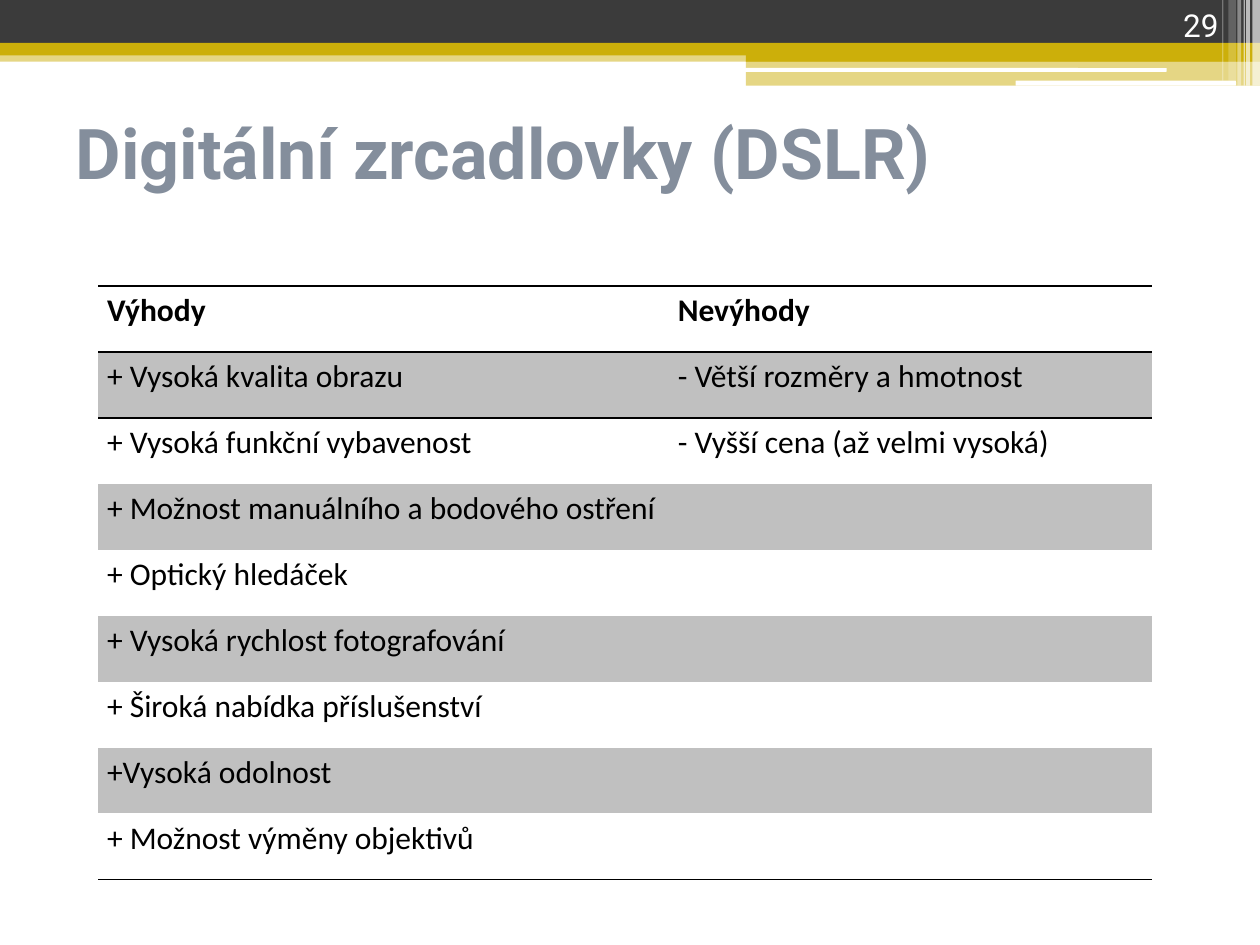
import pptx
import pptx.util
import pptx.dml.color
import pptx.enum.shapes
import pptx.enum.text
import pptx.oxml.ns
import lxml.etree

COLORS = {"dark": "3B3B3B", "gold": "CCAF0A", "white": "FFFFFF",
          "title": "848E9C", "band": "C0C0C0", "ink": "000000"}
GRID = pptx.util.Inches(0.1)
NO_STYLE = "{2D5ABB26-0587-4C30-8999-92F81FD0307C}"
ALIGN = pptx.enum.text.PP_ALIGN
ANCHOR = pptx.enum.text.MSO_ANCHOR
PRESET = pptx.enum.shapes.MSO_SHAPE


def rgb(name):
    return pptx.dml.color.RGBColor.from_string(COLORS[name])


def cells(*counts):
    return [round(count * GRID) for count in counts]


def xml(tag, parent, **attributes):
    element = lxml.etree.SubElement(parent, pptx.oxml.ns.qn(tag))
    for key, value in attributes.items():
        element.set(key, str(value))
    return element


def write(frame, text, font="Roboto", size=18, color="ink", bold=False,
          align=ALIGN.LEFT, spacing=1.0):
    frame.word_wrap = True
    paragraph = frame.paragraphs[0]
    paragraph.alignment = align
    paragraph.line_spacing = spacing
    run = paragraph.add_run()
    run.text = text
    run.font.name = font
    run.font.size = pptx.util.Pt(size)
    run.font.bold = bold
    run.font.color.rgb = rgb(color)


class SlideBuilder:
    def __init__(self, deck):
        self.slide = deck.slides.add_slide(deck.slide_layouts[5])

    def bar(self, box, color, opacity=100, preset=PRESET.RECTANGLE):
        bar = self.slide.shapes.add_shape(preset, *cells(*box))
        bar.shadow.inherit = False
        bar.line.fill.background()
        bar.fill.solid()
        bar.fill.fore_color.rgb = rgb(color)
        if opacity < 100:
            tone = bar._element.spPr.find(".//" + pptx.oxml.ns.qn("a:srgbClr"))
            xml("a:alpha", tone, val=opacity * 1000)

    def title(self, box, text):
        title = self.slide.shapes.title
        title.left, title.top, title.width, title.height = cells(*box)
        title.text_frame.auto_size = pptx.enum.text.MSO_AUTO_SIZE.NONE
        title.text_frame.vertical_anchor = ANCHOR.MIDDLE
        write(title.text_frame, text, size=40, color="title", bold=True)

    def page_number(self, box, text):
        frame = self.slide.shapes.add_textbox(*cells(*box)).text_frame
        frame.vertical_anchor = ANCHOR.BOTTOM
        write(frame, text, color="white", align=ALIGN.RIGHT)

    def rule(self, cell, side):
        line = xml("a:ln" + side, cell._tc.get_or_add_tcPr(), w=pptx.util.Pt(1))
        xml("a:srgbClr", xml("a:solidFill", line), val=COLORS["ink"])

    def table(self, box, widths, rows):
        table = self.slide.shapes.add_table(len(rows), len(widths), *cells(*box)).table
        table.first_row = table.horz_banding = False
        table._tbl.tblPr.find(pptx.oxml.ns.qn("a:tableStyleId")).text = NO_STYLE
        for column, width in zip(table.columns, cells(*widths)):
            column.width = width
        for r, row in enumerate(rows):
            for c, text in enumerate(row):
                cell = table.cell(r, c)
                if r < 2:
                    self.rule(cell, "T")
                if r in (0, len(rows) - 1):
                    self.rule(cell, "B")
                if r % 2:
                    cell.fill.solid()
                    cell.fill.fore_color.rgb = rgb("band")
                else:
                    cell.fill.background()
                if text:
                    cell.margin_left = cell.margin_right = pptx.util.Inches(0.07)
                    cell.margin_top = cell.margin_bottom = 0
                    write(cell.text_frame, text, font="Calibri", bold=r == 0,
                          align=ALIGN.JUSTIFY, spacing=1.15)


def main():
    deck = pptx.Presentation()
    deck.slide_width, deck.slide_height = cells(100, 75)
    page = SlideBuilder(deck)

    page.bar((0, 4, 100, 0.9), "gold", 50)
    page.bar((0, 0, 100, 3.4), "dark")
    page.bar((0, 3.4, 100, 1), "gold")
    page.bar((59.2, 3.9, 40.8, 1), "gold")
    page.bar((59.2, 4.8, 40.8, 2), "gold", 50)
    for box in ((59.1, 5.4, 33.5, 0.3), (80.6, 6.4, 17.5, 0.4)):
        page.bar(box, "white", preset=PRESET.ROUNDED_RECTANGLE)
    for left, width, height, opacity in (
            (99.4, 0.6, 6.8, 65), (98.9, 0.3, 6.8, 65), (98.7, 0.1, 6.8, 60),
            (98.2, 0.3, 6.8, 40), (97.5, 0.6, 6.4, 20), (97, 0.1, 6.4, 30)):
        page.bar((left, 0, width, height), "white", opacity)

    page.title((5, 6.2, 93.4, 11.7), "Digitální zrcadlovky (DSLR)")
    page.page_number((89.4, 0, 8.3, 4), "29")
    page.table((7.8, 22.7, 83.6, 47.1), (45.3, 38.3), [
        ("Výhody", "Nevýhody"),
        ("+ Vysoká kvalita obrazu", "- Větší rozměry a hmotnost"),
        ("+ Vysoká funkční vybavenost", "- Vyšší cena (až velmi vysoká)"),
        ("+ Možnost manuálního a bodového ostření", ""),
        ("+ Optický hledáček", ""),
        ("+ Vysoká rychlost fotografování", ""),
        ("+ Široká nabídka příslušenství", ""),
        ("+Vysoká odolnost", ""),
        ("+ Možnost výměny objektivů ", ""),
    ])
    deck.save("out.pptx")


if __name__ == "__main__":
    main()
